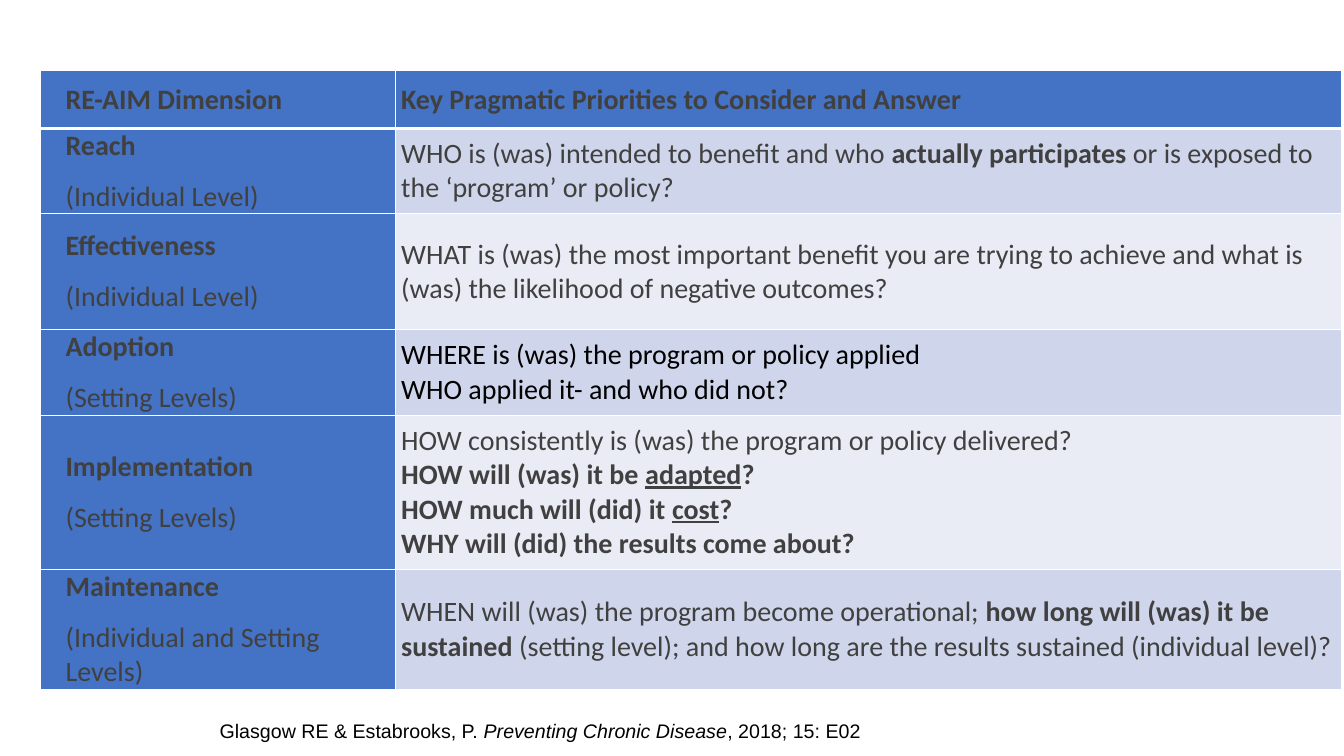
from dataclasses import dataclass

from lxml.etree import SubElement
from pptx import Presentation
from pptx.dml.color import RGBColor
from pptx.enum.text import MSO_ANCHOR, MSO_AUTO_SIZE
from pptx.oxml.ns import qn
from pptx.util import Inches, Pt


@dataclass(frozen=True)
class Theme:
    header: str = "4472C4"
    bands: tuple = ("CFD5EA", "E9EBF5")
    border: str = "FFFFFF"
    text: str = "404040"
    black: str = "000000"
    table_font: str = "Calibri"
    source_font: str = "Arial"
    table_size: int = 20
    source_size: int = 14
    thin: int = 1
    thick: int = 3
    gap: int = 12


BOLD = {"bold": True}
UNDERLINED = {"bold": True, "underline": True}
ITALIC = {"italic": True}

# Shares of the slide's width and height
TABLE_LEFT, TABLE_TOP = 0.03, 0.0933
COLUMNS = (0.264, 0.7044)
LINE = 0.0511  # height of one table line
HEADER_LINES = 1.5

HEADINGS = ("RE-AIM Dimension", "Key Pragmatic Priorities to Consider and Answer")

# Dimension, level, height in lines, spaced, colour name, paragraphs of runs
DIMENSIONS = [
    ("Reach", "(Individual Level)", 2, True, "text", [
        [("WHO is (was) intended to benefit and who ", {}),
         ("actually participates ", BOLD),
         ("or is exposed to the ‘program’ or policy?", {})]]),
    ("Effectiveness", "(Individual Level)", 3, False, "text", [
        [("WHAT is (was) the most important benefit you are trying to achieve "
          "and what is (was) the likelihood of negative outcomes?", {})]]),
    ("Adoption", "(Setting Levels)", 2, False, "black", [
        [("WHERE is (was) the program or policy applied", {})],
        [("WHO applied it- and who did not?", {})]]),
    ("Implementation", "(Setting Levels)", 4, False, "text", [
        [("HOW consistently is (was) the program or policy delivered?", {})],
        [("HOW will (was) it be ", BOLD), ("adapted", UNDERLINED), ("?", BOLD)],
        [("HOW much will (did) it ", BOLD), ("cost", UNDERLINED), ("?", BOLD)],
        [("WHY will (did) the results come about?", BOLD)]]),
    ("Maintenance", "(Individual and Setting Levels)", 3, True, "text", [
        [("WHEN will (was) the program become operational; ", {}),
         ("how long will (was) it be sustained", BOLD),
         (" (setting level); and how long are the results sustained "
          "(individual level)?", {})]]),
]

SOURCE = [[("Glasgow RE & Estabrooks, P. ", {}),
           ("Preventing Chronic Disease", ITALIC),
           (", 2018; 15: E02", {})]]


class SlideBuilder:
    def __init__(self, presentation, theme):
        self.theme = theme
        self.width = presentation.slide_width
        self.height = presentation.slide_height
        self.slide = presentation.slides.add_slide(presentation.slide_layouts[6])

    def across(self, share):
        return round(self.width * share)

    def down(self, share):
        return round(self.height * share)

    def add_paragraphs(self, frame, paragraphs, font, size, color, gap=0, indent=0):
        for index, runs in enumerate(paragraphs):
            paragraph = frame.paragraphs[0] if index == 0 else frame.add_paragraph()
            paragraph.space_after = Pt(gap)
            paragraph._p.get_or_add_pPr().set("marL", str(Inches(indent)))
            for text, emphasis in runs:
                run = paragraph.add_run()
                run.text = text
                run.font.color.rgb = RGBColor.from_string(color)
                values = {"name": font, "size": Pt(size), "bold": False, **emphasis}
                for name, value in values.items():
                    setattr(run.font, name, value)

    def border(self, cell, top, bottom):
        thin = self.theme.thin
        properties = cell._tc.get_or_add_tcPr()
        for side, points in zip("LRTB", (thin, thin, top, bottom)):
            line = SubElement(properties, qn(f"a:ln{side}"), w=str(Pt(points)))
            fill = SubElement(line, qn("a:solidFill"))
            SubElement(fill, qn("a:srgbClr"), val=self.theme.border)

    def cell(self, cell, paragraphs, fill, color, top, bottom, gap=0, indent=0):
        self.border(cell, top, bottom)
        cell.fill.solid()
        cell.fill.fore_color.rgb = RGBColor.from_string(fill)
        values = {"vertical_anchor": MSO_ANCHOR.MIDDLE,
                  "margin_left": Inches(0.06), "margin_right": Inches(0.06),
                  "margin_top": 0, "margin_bottom": 0}
        for name, value in values.items():
            setattr(cell, name, value)
        self.add_paragraphs(cell.text_frame, paragraphs, self.theme.table_font,
                            self.theme.table_size, color, gap, indent)

    def table(self, left, top, columns, lines):
        table = self.slide.shapes.add_table(
            len(lines), len(columns), self.across(left), self.down(top),
            self.across(sum(columns)), self.down(LINE * sum(lines))).table
        for column, share in zip(table.columns, columns):
            column.width = self.across(share)
        for row, count in zip(table.rows, lines):
            row.height = self.down(LINE * count)
        return table

    def text(self, left, top, width, height, paragraphs):
        frame = self.slide.shapes.add_textbox(
            self.across(left), self.down(top),
            self.across(width), self.down(height)).text_frame
        frame.word_wrap = True
        frame.auto_size = MSO_AUTO_SIZE.SHAPE_TO_FIT_TEXT
        self.add_paragraphs(frame, paragraphs, self.theme.source_font,
                            self.theme.source_size, self.theme.black)


def main():
    presentation = Presentation()
    presentation.slide_width = Inches(13.33)
    presentation.slide_height = Inches(7.5)
    theme = Theme()
    builder = SlideBuilder(presentation, theme)

    # Table and its heading row
    lines = [HEADER_LINES] + [dimension[2] for dimension in DIMENSIONS]
    table = builder.table(TABLE_LEFT, TABLE_TOP, COLUMNS, lines)
    for column, (heading, indent) in enumerate(zip(HEADINGS, (0.19, 0))):
        builder.cell(table.cell(0, column), [[(heading, BOLD)]], theme.header,
                     theme.text, theme.thin, theme.thick, indent=indent)

    # One row for each dimension
    for row, (name, level, _, spaced, color, priorities) in enumerate(DIMENSIONS, 1):
        top = theme.thick if row == 1 else theme.thin
        builder.cell(table.cell(row, 0), [[(name, BOLD)], [(level, {})]],
                     theme.header, theme.text, top, theme.thin, theme.gap, 0.19)
        builder.cell(table.cell(row, 1), priorities, theme.bands[(row - 1) % 2],
                     getattr(theme, color), top, theme.thin,
                     theme.gap if spaced else 0)

    # Source line
    builder.text(0.156, 0.944, 0.4936, 0.0453, SOURCE)
    presentation.save("out.pptx")


if __name__ == "__main__":
    main()
